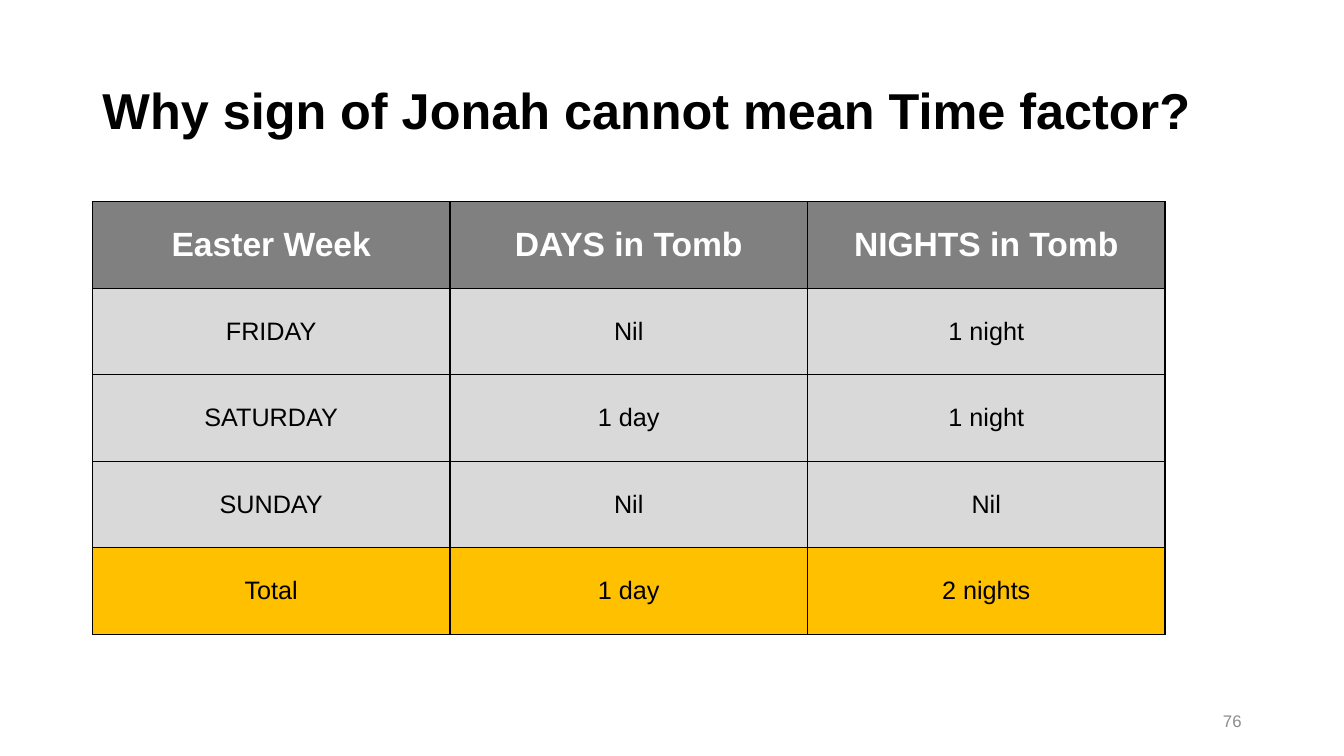
from lxml import etree
from pptx import Presentation
from pptx.dml.color import RGBColor
from pptx.enum.text import MSO_ANCHOR, PP_ALIGN
from pptx.oxml.ns import qn
from pptx.util import Inches, Pt

LEFT, CENTER, RIGHT = PP_ALIGN.LEFT, PP_ALIGN.CENTER, PP_ALIGN.RIGHT
MIDDLE = MSO_ANCHOR.MIDDLE
TITLE_ONLY = 5
GRID_COLUMNS, GRID_ROWS = 160, 90

TOMB_TIMES = [
    ["Easter Week", "DAYS in Tomb", "NIGHTS in Tomb"],
    ["FRIDAY", "Nil", "1 night"],
    ["SATURDAY", "1 day", "1 night"],
    ["SUNDAY", "Nil", "Nil"],
    ["Total", "1 day", "2 nights"],
]


def color(value):
    return RGBColor.from_string(value)


class SlideBuilder:
    font_name = "Arial"
    black, white, muted = "000000", "FFFFFF", "8C8C8C"
    header_fill, body_fill, total_fill = "808080", "D9D9D9", "FFC000"

    def __init__(self, deck):
        self.slide = deck.slides.add_slide(deck.slide_layouts[TITLE_ONLY])
        self.column = deck.slide_width / GRID_COLUMNS
        self.row = deck.slide_height / GRID_ROWS

    def area(self, left, top, width, height):
        return (round(left * self.column), round(top * self.row),
                round(width * self.column), round(height * self.row))

    def style_text(self, frame, text, size, text_color, align, bold=False):
        frame.text = text
        para = frame.paragraphs[0]
        para.alignment = align
        para.font.name = self.font_name
        para.font.size = Pt(size)
        para.font.bold = bold
        para.font.color.rgb = color(text_color)
        return para

    def fit_frame(self, frame):
        frame.word_wrap = True
        frame.vertical_anchor = MIDDLE

    def title(self, text, *place):
        box = self.slide.shapes.title
        box.left, box.top, box.width, box.height = self.area(*place)
        self.fit_frame(box.text_frame)
        para = self.style_text(box.text_frame, text, 36, self.black, LEFT, bold=True)
        para.line_spacing = 0.9

    def text(self, text, size, text_color, align, *place):
        box = self.slide.shapes.add_textbox(*self.area(*place))
        self.fit_frame(box.text_frame)
        self.style_text(box.text_frame, text, size, text_color, align)

    def border(self, cell):
        properties = cell._tc.get_or_add_tcPr()
        for side in ("a:lnL", "a:lnR", "a:lnT", "a:lnB"):
            line = etree.SubElement(properties, qn(side), w=str(Pt(1)))
            fill = etree.SubElement(line, qn("a:solidFill"))
            etree.SubElement(fill, qn("a:srgbClr"), val=self.black)

    def table(self, rows, *place):
        frame = self.slide.shapes.add_table(len(rows), len(rows[0]), *self.area(*place))
        table = frame.table
        table.first_row = table.horz_banding = False
        fills = [self.header_fill] + [self.body_fill] * (len(rows) - 2) + [self.total_fill]
        for row_index, (texts, fill) in enumerate(zip(rows, fills)):
            header = row_index == 0
            size, text_color = (24, self.white) if header else (18, self.black)
            for column_index, text in enumerate(texts):
                cell = table.cell(row_index, column_index)
                self.border(cell)
                cell.fill.solid()
                cell.fill.fore_color.rgb = color(fill)
                cell.vertical_anchor = MIDDLE
                self.style_text(cell.text_frame, text, size, text_color, CENTER, header)


def main():
    deck = Presentation()
    deck.slide_width, deck.slide_height = Inches(13.33), Inches(7.5)
    page = SlideBuilder(deck)
    page.title("Why sign of Jonah cannot mean Time factor?", 11, 4.8, 138, 17.4)
    page.table(TOMB_TIMES, 11, 24, 127.7, 51.5)
    page.text("76", 12, page.muted, RIGHT, 113, 83.4, 36, 4.8)
    deck.save("out.pptx")


if __name__ == "__main__":
    main()
